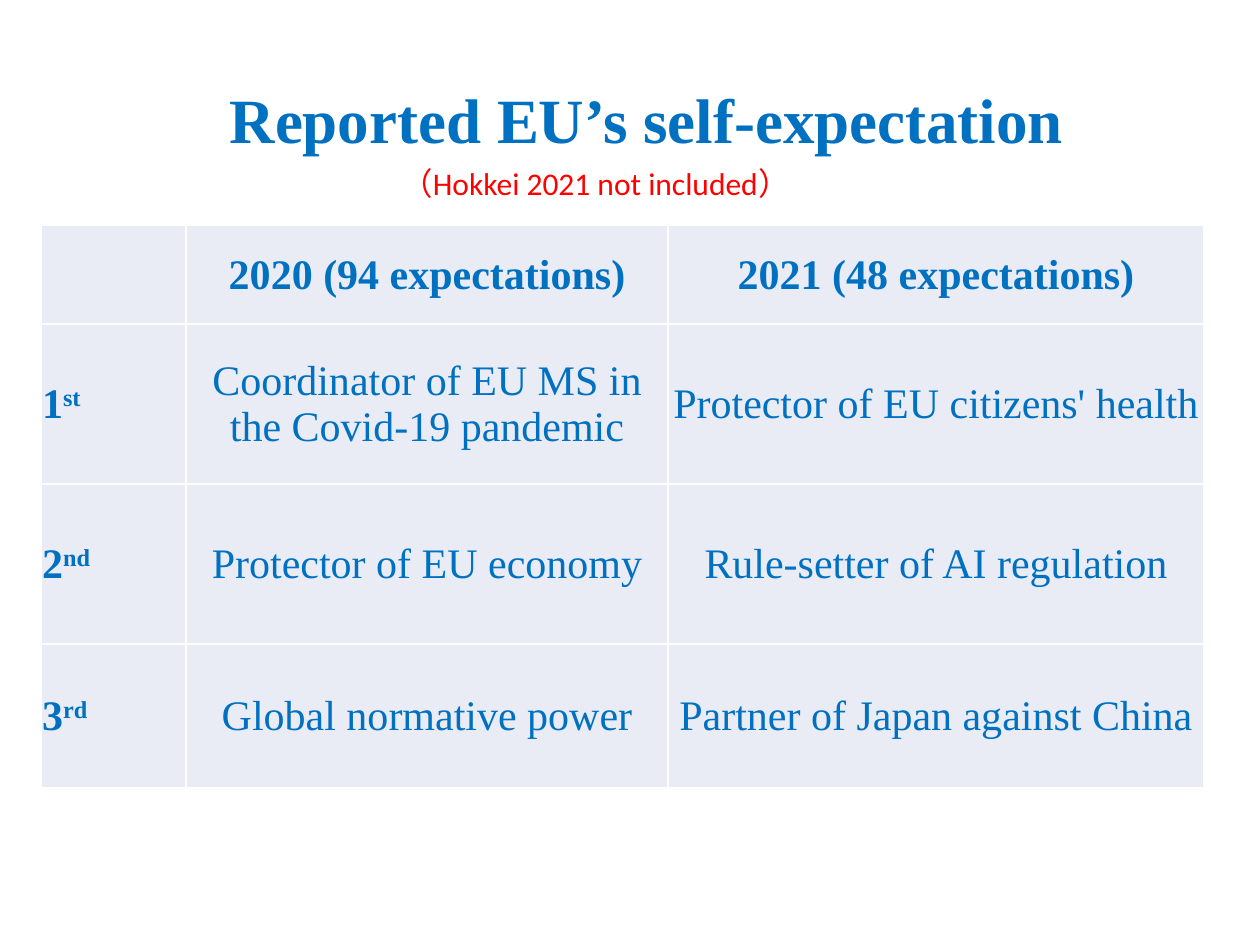
from lxml import etree
from pptx import Presentation
from pptx import util as u
from pptx.dml.color import RGBColor
from pptx.enum import text
from pptx.oxml.ns import qn

SCALE = 914400 / 126
BLUE, RED, WHITE, PALE = "0070C0", "FF0000", "FFFFFF", "E9EBF5"
SERIF = "Times New Roman"


def px(value):
    return u.Emu(round(value * SCALE))


def write(frame, words, size=24, font=SERIF, color=BLUE, bold=False,
          align=text.PP_ALIGN.CENTER, spacing=None, raised=""):
    para = frame.paragraphs[0]
    para.alignment = align
    para.line_spacing = spacing
    for part in filter(None, (words, raised)):
        span = para.add_run()
        span.text = part
        span.font.size = u.Pt(size)
        span.font.name = font
        span.font.bold = bold
        span.font.color.rgb = RGBColor.from_string(color)
        if part == raised:
            span.font._element.set("baseline", "30000")


deck = Presentation()
deck.slide_width, deck.slide_height = px(1260), px(945)
page = deck.slides.add_slide(deck.slide_layouts[6])

title = page.shapes.add_textbox(px(57), px(63), px(1179), px(120)).text_frame
title.word_wrap = True
title.vertical_anchor = text.MSO_ANCHOR.MIDDLE
write(title, "Reported EU’s self-expectation", size=36, bold=True, spacing=0.9)

columns = [145, 482, 536]
rows = [99, 160, 160, 144]
content = [
    ["", "2020 (94 expectations)", "2021 (48 expectations)"],
    ["1st", "Coordinator of EU MS in the Covid-19 pandemic", "Protector of EU citizens' health"],
    ["2nd", "Protector of EU economy", "Rule-setter of AI regulation"],
    ["3rd", "Global normative power", "Partner of Japan against China"],
]
table = page.shapes.add_table(len(rows), len(columns), px(41), px(225),
                              px(sum(columns)), px(sum(rows))).table
table.first_row = table.horz_banding = False
for column, width in zip(table.columns, columns):
    column.width = px(width)
for row, height in zip(table.rows, rows):
    row.height = px(height)

for r, line in enumerate(content):
    for c, words in enumerate(line):
        cell = table.cell(r, c)
        cell.vertical_anchor = text.MSO_ANCHOR.MIDDLE
        cell.margin_left = cell.margin_right = cell.margin_top = px(1)
        cell.margin_bottom = 0
        if c == 0:
            write(cell.text_frame, words[:1], raised=words[1:], bold=True,
                  align=text.PP_ALIGN.LEFT)
        else:
            write(cell.text_frame, words, bold=r == 0)
        properties = cell._tc.get_or_add_tcPr()
        for side in ("a:lnL", "a:lnR", "a:lnT", "a:lnB"):
            border = etree.SubElement(properties, qn(side), w=str(u.Pt(1)))
            fill = etree.SubElement(border, qn("a:solidFill"))
            etree.SubElement(fill, qn("a:srgbClr"), val=WHITE)
        cell.fill.solid()
        cell.fill.fore_color.rgb = RGBColor.from_string(PALE)

note = page.shapes.add_textbox(px(389), px(158), px(630), px(50)).text_frame
note.word_wrap = True
note.auto_size = text.MSO_AUTO_SIZE.SHAPE_TO_FIT_TEXT
write(note, "（Hokkei 2021 not included）", size=18, font="Calibri", color=RED,
      align=text.PP_ALIGN.LEFT)

deck.save("out.pptx")
